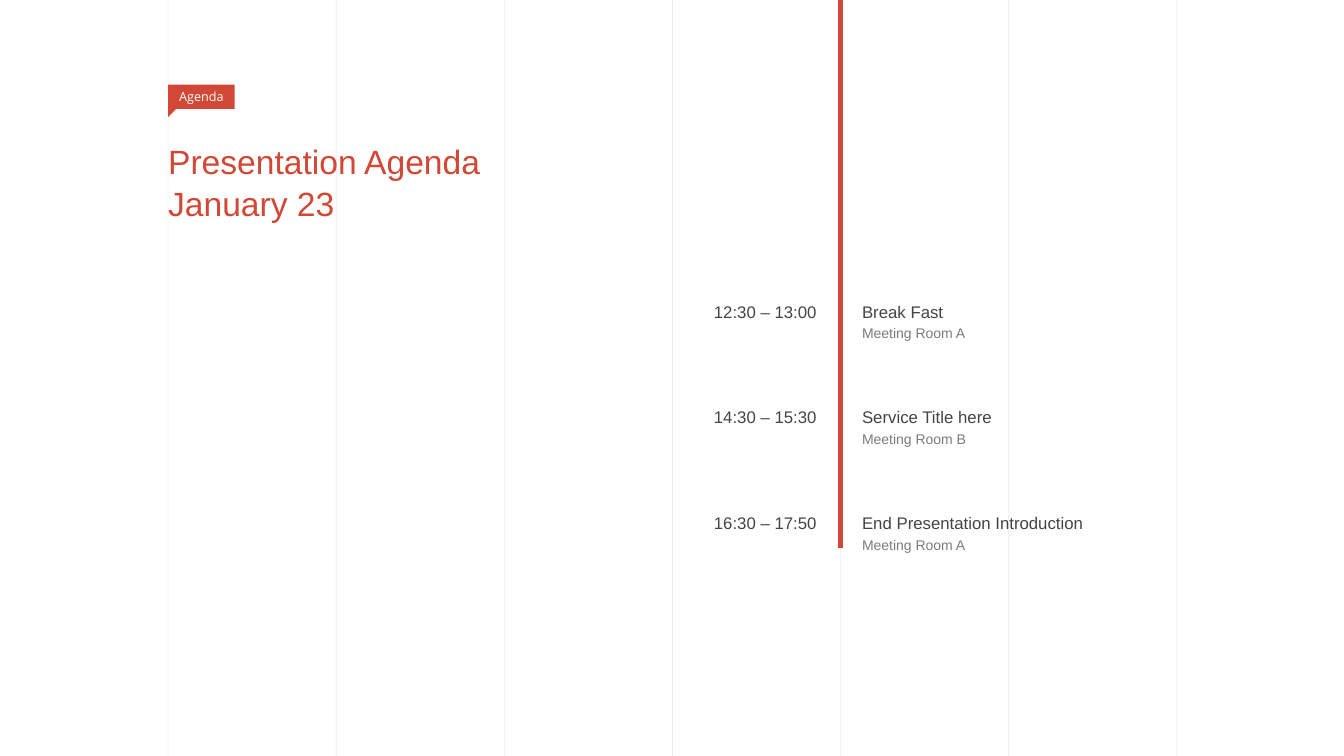
from lxml import etree
from pptx import Presentation
from pptx.dml.color import RGBColor
from pptx.enum.shapes import MSO_CONNECTOR, MSO_SHAPE
from pptx.enum.text import MSO_ANCHOR, MSO_AUTO_SIZE, PP_ALIGN
from pptx.oxml.ns import qn
from pptx.util import Inches, Pt

TITLE = ["Presentation Agenda", "January 23"]
TAG = "Agenda"
AGENDA = [
    ("12:30 – 13:00", "Break Fast", "Meeting Room A"),
    ("14:30 – 15:30", "Service Title here", "Meeting Room B"),
    ("16:30 – 17:50", "End Presentation Introduction", "Meeting Room A"),
]
RED, GREY, WHITE = "D14836", "444444", "FFFFFF"
COLUMN = 13.34 / 8
FIRST_ROW, ROW_STEP = 2.95, 1.05


def set_color(fill, color, opacity=100):
    fill.solid()
    fill.fore_color.rgb = RGBColor.from_string(color)
    if opacity < 100:
        clr = fill._xPr.find(qn("a:solidFill"))[0]
        etree.SubElement(clr, qn("a:alpha")).set("val", str(opacity * 1000))


def add_run(p, text, size, color, font="Arial", opacity=100):
    r = p.add_run()
    r.text = text
    r.font.size = Pt(size)
    r.font.name = font
    set_color(r.font.fill, color, opacity)


def add_vertical(s, x, bottom, color, width, opacity=100):
    line = s.shapes.add_connector(
        MSO_CONNECTOR.STRAIGHT, Inches(x), 0, Inches(x), Inches(bottom))
    line.line.width = Pt(width)
    set_color(line.line.fill, color, opacity)
    etree.SubElement(line._element.spPr, qn("a:effectLst"))


def clear_margins(tf):
    tf.margin_left = tf.margin_right = tf.margin_top = tf.margin_bottom = 0
    tf.word_wrap = True


def add_text(s, x, y, w, h, align):
    """Add an empty text box and return its first paragraph."""
    tf = s.shapes.add_textbox(Inches(x), Inches(y), Inches(w), Inches(h)).text_frame
    clear_margins(tf)
    tf.auto_size = MSO_AUTO_SIZE.SHAPE_TO_FIT_TEXT
    p = tf.paragraphs[0]
    p.alignment = align
    p.line_spacing = 1.2
    return p


def add_title(s):
    title = s.shapes.title
    title.left, title.top = Inches(COLUMN), Inches(1.37)
    title.width, title.height = Inches(5), Inches(0.82)
    tf = title.text_frame
    clear_margins(tf)
    tf.auto_size = MSO_AUTO_SIZE.NONE
    tf.vertical_anchor = MSO_ANCHOR.TOP
    p = tf.paragraphs[0]
    p.alignment = PP_ALIGN.LEFT
    p.line_spacing = 1.06
    add_run(p, TITLE[0], 24, RED)
    p.add_line_break()
    add_run(p, TITLE[1], 24, RED)
    s.shapes._spTree.append(title._element)  # bring in front of the grid


def add_tag(s):
    group = s.shapes.add_group_shape()

    def add_part(kind, y, w, h):
        sp = group.shapes.add_shape(
            kind, Inches(COLUMN), Inches(y), Inches(w), Inches(h))
        sp.shadow.inherit = False
        set_color(sp.fill, RED)
        sp.line.fill.background()
        return sp

    label = add_part(MSO_SHAPE.RECTANGLE, 0.84, 0.66, 0.24)
    tf = label.text_frame
    clear_margins(tf)
    tf.word_wrap = False
    tf.vertical_anchor = MSO_ANCHOR.MIDDLE
    p = tf.paragraphs[0]
    p.alignment = PP_ALIGN.CENTER
    add_run(p, TAG, 9, WHITE, "Open Sans")
    pointer = add_part(MSO_SHAPE.RIGHT_TRIANGLE, 1.08, 0.08, 0.08)
    pointer.rotation = 90


def main():
    prs = Presentation()
    prs.slide_width, prs.slide_height = Inches(13.33), Inches(7.5)
    s = prs.slides.add_slide(prs.slide_layouts[5])
    for i in range(1, 8):
        add_vertical(s, i * COLUMN, 7.5, GREY, 0.5, 10)
    add_title(s)
    add_vertical(s, 5 * COLUMN, 5.44, RED, 4)
    add_tag(s)
    for i, (time, topic, room) in enumerate(AGENDA):
        y = FIRST_ROW + i * ROW_STEP
        p = add_text(s, 8.55, y, 3.12, 0.43, PP_ALIGN.LEFT)
        add_run(p, topic, 12, GREY)
        p.add_line_break()
        add_run(p, room, 10, GREY, opacity=70)
        p = add_text(s, 6.67, y, 1.43, 0.22, PP_ALIGN.RIGHT)
        add_run(p, time, 12, GREY)
    prs.save("out.pptx")


if __name__ == "__main__":
    main()
